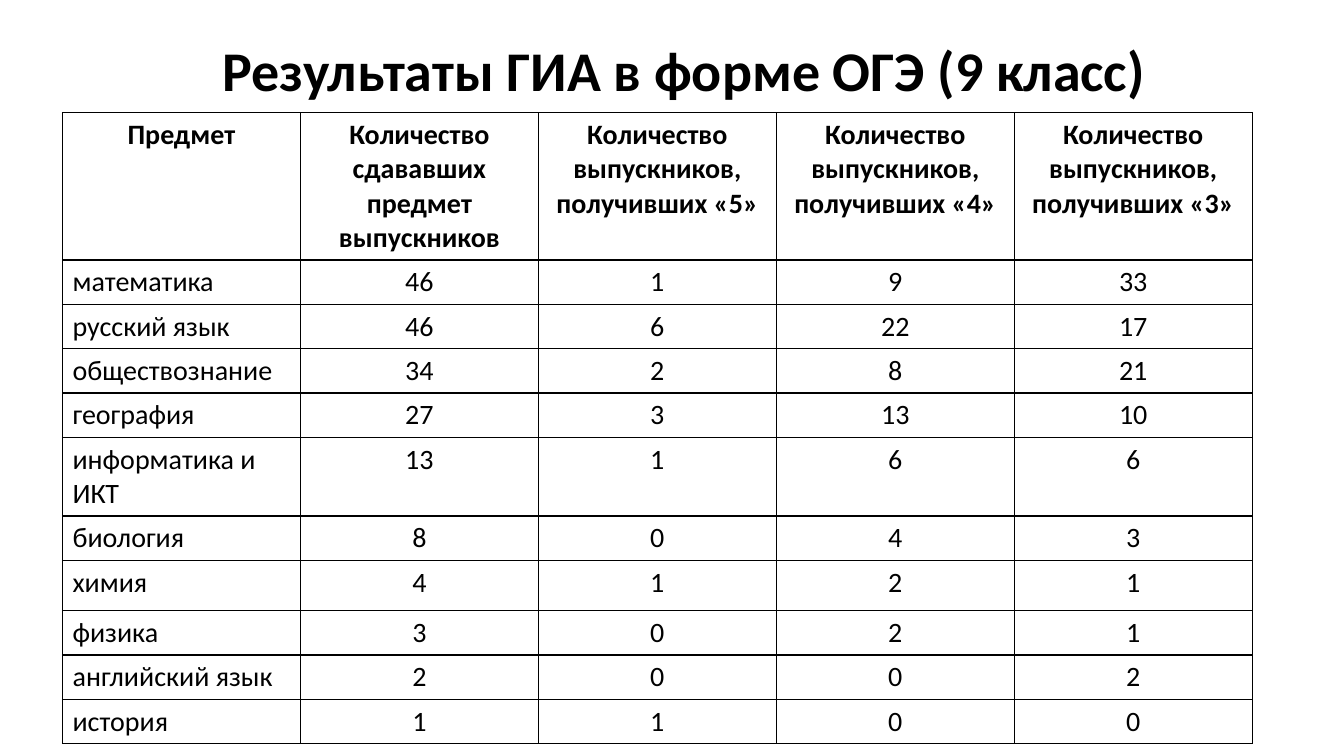
from dataclasses import dataclass

from lxml import etree
from pptx import Presentation
from pptx.dml.color import RGBColor
from pptx.enum.text import MSO_ANCHOR, PP_ALIGN
from pptx.oxml.ns import qn
from pptx.util import Inches, Pt

LEFT = PP_ALIGN.LEFT
CENTER = PP_ALIGN.CENTER
MIDDLE = MSO_ANCHOR.MIDDLE


@dataclass(frozen=True)
class Theme:
    """Colours, fonts and sizes of the slide."""
    font: str = "Calibri"
    ink: str = "000000"
    paper: str = "FFFFFF"
    title_size: int = 40
    table_size: int = 20
    border_width: int = 1


THEME = Theme()
TITLE = "Результаты ГИА в форме ОГЭ (9 класс)"
HEADERS = ["Предмет", "Количество сдававших предмет выпускников"] + [
    f"Количество выпускников, получивших «{grade}»" for grade in (5, 4, 3)]
RESULTS = [
    ("математика", 46, 1, 9, 33),
    ("русский язык", 46, 6, 22, 17),
    ("обществознание", 34, 2, 8, 21),
    ("география", 27, 3, 13, 10),
    ("информатика и ИКТ", 13, 1, 6, 6),
    ("биология", 8, 0, 4, 3),
    ("химия", 4, 1, 2, 1),
    ("физика", 3, 0, 2, 1),
    ("английский язык", 2, 0, 0, 2),
    ("история", 1, 1, 0, 0),
]
HEADER_HEIGHT = 1.46
ROW_HEIGHT = 0.44
SPECIAL_HEIGHTS = {"информатика и ИКТ": 0.78, "химия": 0.5}


def style_paragraph(para, size, bold, alignment):
    """Set the font and alignment of a paragraph."""
    para.alignment = alignment
    para.font.name = THEME.font
    para.font.size = Pt(size)
    para.font.bold = bold
    para.font.color.rgb = RGBColor.from_string(THEME.ink)


def add_borders(cell):
    """Draw a thin line on all four sides of a cell."""
    properties = cell._tc.get_or_add_tcPr()
    for position, side in enumerate(("a:lnL", "a:lnR", "a:lnT", "a:lnB")):
        line = etree.Element(qn(side), w=str(Pt(THEME.border_width)))
        fill = etree.SubElement(line, qn("a:solidFill"))
        etree.SubElement(fill, qn("a:srgbClr"), val=THEME.ink)
        properties.insert(position, line)


def add_title(page, left, top, width, height):
    """Place the centred title in its box."""
    box = page.shapes.add_textbox(
        Inches(left), Inches(top), Inches(width), Inches(height))
    frame = box.text_frame
    frame.word_wrap = True
    frame.vertical_anchor = MIDDLE
    para = frame.paragraphs[0]
    para.text = TITLE
    para.line_spacing = 0.9
    style_paragraph(para, THEME.title_size, True, CENTER)


def add_results_table(page, left, top, width):
    """Place the table of exam results with equal columns."""
    rows = [HEADERS, *RESULTS]
    heights = [HEADER_HEIGHT] + [
        SPECIAL_HEIGHTS.get(result[0], ROW_HEIGHT) for result in RESULTS]
    table = page.shapes.add_table(
        len(rows), len(HEADERS), Inches(left), Inches(top),
        Inches(width), Inches(sum(heights))).table
    table.horz_banding = False
    for column in table.columns:
        column.width = Inches(width / len(HEADERS))
    for row_index, (values, height) in enumerate(zip(rows, heights)):
        table.rows[row_index].height = Inches(height)
        is_header = row_index == 0
        for column_index, value in enumerate(values):
            cell = table.cell(row_index, column_index)
            cell.text = str(value)
            cell.fill.solid()
            cell.fill.fore_color.rgb = RGBColor.from_string(THEME.paper)
            add_borders(cell)
            alignment = CENTER if is_header or column_index else LEFT
            style_paragraph(cell.text_frame.paragraphs[0],
                            THEME.table_size, is_header, alignment)


def main():
    """Build the slide and save the deck."""
    deck = Presentation()
    deck.slide_width = Inches(13.33)
    deck.slide_height = Inches(7.5)
    page = deck.slides.add_slide(deck.slide_layouts[6])
    add_title(page, 1.03, 0, 11.5, 1.45)
    add_results_table(page, 0.62, 1.12, 11.8)
    deck.save("out.pptx")


if __name__ == "__main__":
    main()
